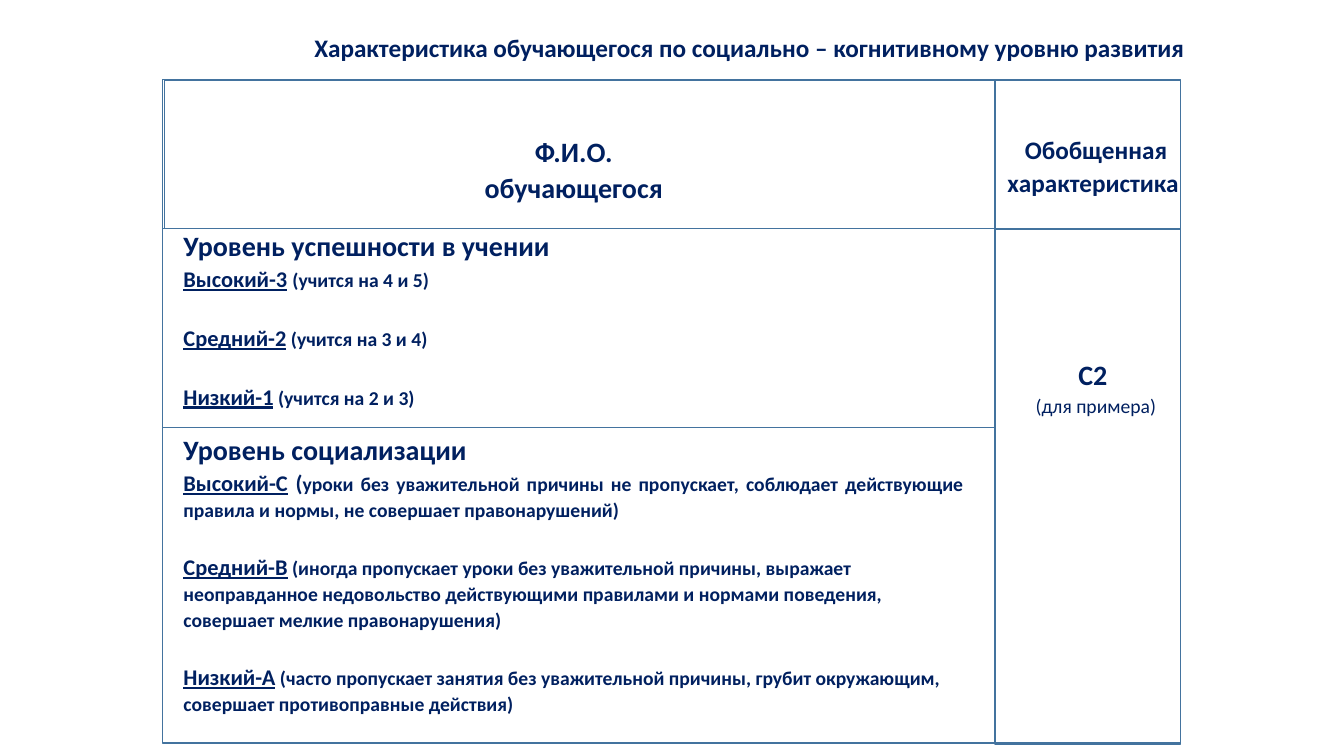
"""Builds a slide with a table of a student's academic and social levels."""
import pptx
import pptx.util
import pptx.dml.color
import pptx.enum.shapes
import pptx.enum.text

Inches = pptx.util.Inches
Pt = pptx.util.Pt
ALIGN = pptx.enum.text.PP_ALIGN

NAVY = pptx.dml.color.RGBColor(0x00, 0x20, 0x60)
BLUE = pptx.dml.color.RGBColor(0x43, 0x73, 0x9E)

HEADING = {"size": Pt(20)}
COLUMN_HEADING = {"size": Pt(18)}
LEVEL = {"size": Pt(16), "underline": True}
BRACKET = {"size": Pt(16)}
DETAIL = {"size": Pt(14)}
NOTE = {"size": Pt(14), "bold": False}

CENTER = {"alignment": ALIGN.CENTER, "line_spacing": 1.07}
JUSTIFY = {"alignment": ALIGN.JUSTIFY, "line_spacing": 1.07}
LEFT = {"alignment": ALIGN.LEFT, "line_spacing": 1.07}
LEVEL_GAP = {"space_before": Pt(21)}


class SlideBuilder:
    def __init__(self, slide):
        self.slide = slide
        self.font = {"name": "Calibri", "bold": True}

    def fill_text(self, frame, paragraphs):
        for index, (layout, runs) in enumerate(paragraphs):
            paragraph = frame.add_paragraph() if index else frame.paragraphs[0]
            for name, value in layout.items():
                setattr(paragraph, name, value)
            for text, style in runs:
                run = paragraph.add_run()
                run.text = text
                run.font.color.rgb = NAVY
                for name, value in {**self.font, **style}.items():
                    setattr(run.font, name, value)

    def text(self, left, top, width, height, paragraphs):
        box = self.slide.shapes.add_textbox(
            Inches(left), Inches(top), Inches(width), Inches(height))
        box.text_frame.word_wrap = True
        self.fill_text(box.text_frame, paragraphs)

    def outline(self, left, top, width, height):
        shape = self.slide.shapes.add_shape(
            pptx.enum.shapes.MSO_SHAPE.RECTANGLE,
            Inches(left), Inches(top), Inches(width), Inches(height))
        shape.shadow.inherit = False
        shape.fill.background()
        shape.line.color.rgb = BLUE
        shape.line.width = Pt(1)

    def table(self, left, top, widths, heights):
        table = self.slide.shapes.add_table(
            len(heights), len(widths), Inches(left), Inches(top),
            Inches(sum(widths)), Inches(sum(heights))).table
        table.first_row = table.horz_banding = False
        for column, width in zip(table.columns, widths):
            column.width = Inches(width)
        for row, height in zip(table.rows, heights):
            row.height = Inches(height)
        for cell in table.iter_cells():
            cell.fill.background()
            cell.margin_left = cell.margin_right = Inches(0.07)
            cell.margin_top = cell.margin_bottom = 0
        return table


def main():
    presentation = pptx.Presentation()
    presentation.slide_width = Inches(13.33)
    presentation.slide_height = Inches(7.5)
    builder = SlideBuilder(
        presentation.slides.add_slide(presentation.slide_layouts[6]))

    table = builder.table(1.75, 1.32, [7.88, 2.48], [0.94, 2.02, 3.28])
    table.cell(1, 1).merge(table.cell(2, 1))
    table.cell(1, 1).margin_top = Inches(1.28)
    contents = {
        (0, 0): [
            (CENTER, [("Ф.И.О.", HEADING)]),
            (CENTER, [("обучающегося", HEADING)]),
        ],
        (0, 1): [(CENTER, [("Обобщенная характеристика ", COLUMN_HEADING)])],
        (1, 0): [
            (JUSTIFY, [("Уровень успешности в учении", HEADING)]),
            (JUSTIFY, [("Высокий-3", LEVEL), (" ", BRACKET),
                       ("(учится на 4 и 5)", DETAIL)]),
            (JUSTIFY | LEVEL_GAP, [("Средний-2", LEVEL),
                                   (" (учится на 3 и 4)", DETAIL)]),
            (JUSTIFY | LEVEL_GAP, [("Низкий-1", LEVEL),
                                   (" (учится на 2 и 3)", DETAIL)]),
        ],
        (1, 1): [
            (CENTER, [("С2 ", HEADING)]),
            (CENTER, [("(для примера)", NOTE)]),
        ],
        (2, 0): [
            (JUSTIFY, [("Уровень социализации", HEADING)]),
            (JUSTIFY, [
                ("Высокий-С", LEVEL), (" (", BRACKET),
                ("уроки без уважительной причины не пропускает, соблюдает "
                 "действующие правила и нормы, не совершает "
                 "правонарушений) ", DETAIL)]),
            (LEFT | LEVEL_GAP, [
                ("Средний-В", LEVEL),
                (" (иногда пропускает уроки без уважительной причины, "
                 "выражает неоправданное недовольство действующими правилами "
                 "и нормами поведения, совершает мелкие правонарушения)",
                 DETAIL)]),
            (LEFT | LEVEL_GAP, [
                ("Низкий-А", LEVEL),
                (" (часто пропускает занятия без уважительной причины, "
                 "грубит окружающим, совершает противоправные действия)",
                 DETAIL)]),
        ],
    }
    for (row, column), paragraphs in contents.items():
        builder.fill_text(table.cell(row, column).text_frame, paragraphs)

    for bounds in [
        (1.61, 0.79, 10.1, 6.58),
        (1.63, 0.8, 8.24, 1.47),
        (9.87, 0.8, 1.84, 1.47),
        (1.61, 2.27, 8.26, 1.97),
        (9.87, 2.27, 1.84, 5.11),
    ]:
        builder.outline(*bounds)

    builder.text(3.02, 0.27, 8.99, 0.71, [
        ({}, [("Характеристика обучающегося по социально – когнитивному "
               "уровню развития", COLUMN_HEADING)])])
    presentation.save("out.pptx")


if __name__ == "__main__":
    main()
